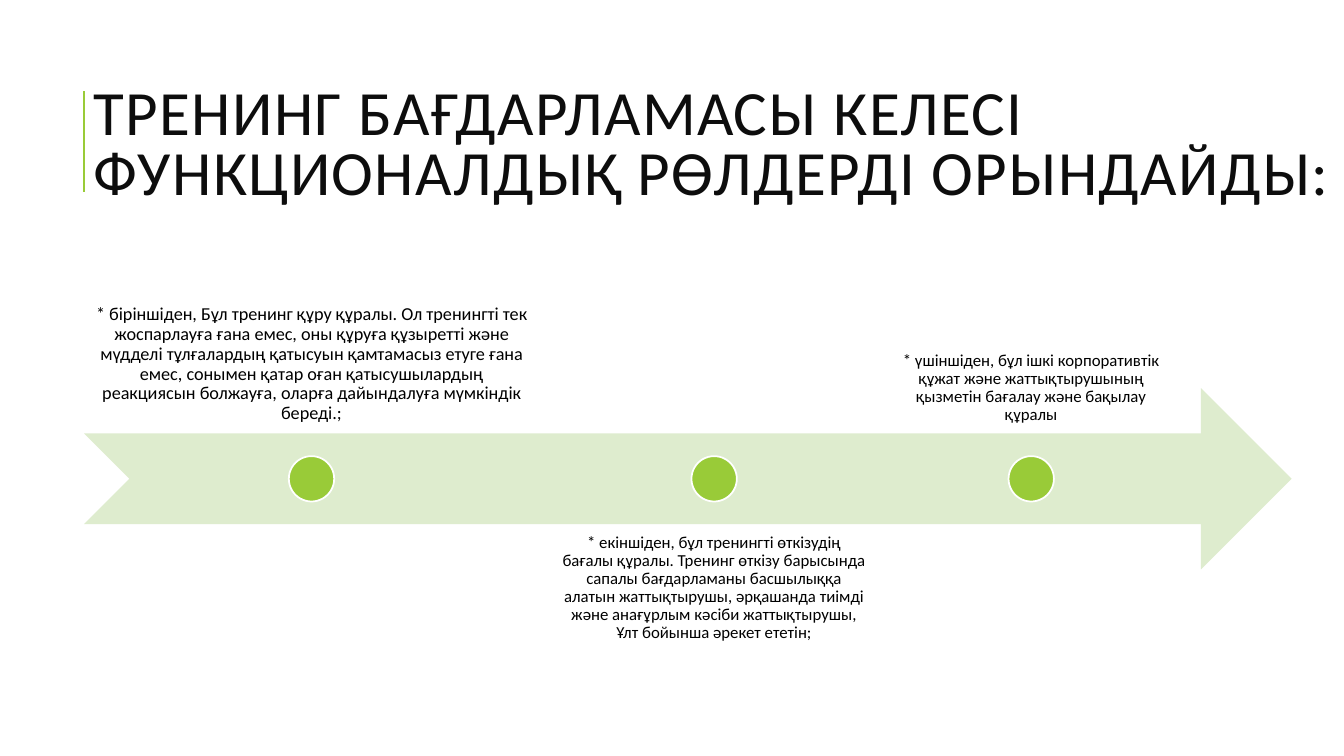
from dataclasses import dataclass

from lxml.etree import SubElement
from pptx import Presentation
from pptx.dml.color import RGBColor
from pptx.enum.shapes import MSO_CONNECTOR as Connector, MSO_SHAPE as Shape
from pptx.enum.text import MSO_ANCHOR as Anchor, PP_ALIGN as Align
from pptx.oxml.ns import qn
from pptx.util import Pt


@dataclass(frozen=True)
class Theme:
    font: str = "Calibri"
    accent: RGBColor = RGBColor(0x99, 0xCB, 0x38)
    arrow: RGBColor = RGBColor(0xDE, 0xEC, 0xCE)
    white: RGBColor = RGBColor(0xFF, 0xFF, 0xFF)
    heading: RGBColor = RGBColor(0x0D, 0x0D, 0x0D)
    body: RGBColor = RGBColor(0, 0, 0)
    heading_size: float = 45
    large_size: float = 13
    small_size: float = 12


THEME = Theme()

HEADING = "ТРЕНИНГ БАҒДАРЛАМАСЫ КЕЛЕСІ ФУНКЦИОНАЛДЫҚ РӨЛДЕРДІ ОРЫНДАЙДЫ:"

# Each role: offset from the timeline's left, width, type size, inset, text
ROLES = [
    (0.5, 324, THEME.large_size, 7.2,
     "* біріншіден, Бұл тренинг құру құралы. Ол тренингті тек жоспарлауға ғана "
     "емес, оны құруға құзыретті және мүдделі тұлғалардың қатысуын қамтамасыз "
     "етуге ғана емес, сонымен қатар оған қатысушылардың реакциясын болжауға, "
     "оларға дайындалуға мүмкіндік береді.;"),
    (333.8, 232.6, THEME.small_size, 6.7,
     "* екіншіден, бұл тренингті өткізудің бағалы құралы. Тренинг өткізу "
     "барысында сапалы бағдарламаны басшылыққа алатын жаттықтырушы, әрқашанда "
     "тиімді және анағұрлым кәсіби жаттықтырушы, Ұлт бойынша әрекет ететін;"),
    (576.5, 200.2, THEME.small_size, 6.7,
     "* үшіншіден, бұл ішкі корпоративтік құжат және жаттықтырушының қызметін "
     "бағалау және бақылау құралы"),
]


def add_text(slide, box, text, size, color, anchor, align, line_spacing, inset):
    frame = slide.shapes.add_textbox(*map(Pt, box)).text_frame
    frame.word_wrap = True
    frame.vertical_anchor = anchor
    frame.margin_left = frame.margin_right = Pt(inset)
    frame.margin_top = frame.margin_bottom = Pt(inset)
    paragraph = frame.paragraphs[0]
    paragraph.text = text
    paragraph.alignment = align
    paragraph.line_spacing = line_spacing
    paragraph.font.name = THEME.font
    paragraph.font.size = Pt(size)
    paragraph.font.color.rgb = color
    return paragraph


def add_filled(slide, kind, box, color):
    shape = slide.shapes.add_shape(kind, *map(Pt, box))
    shape.shadow.inherit = False
    shape.fill.solid()
    shape.fill.fore_color.rgb = color
    shape.line.fill.background()
    return shape


def add_heading(slide, left, top, width, height):
    # Accent rule at the left edge
    rule = slide.shapes.add_connector(
        Connector.STRAIGHT, Pt(left), Pt(top + 90.7), Pt(left), Pt(top + 18.7))
    rule.line.color.rgb = THEME.accent
    rule.line.width = Pt(1.5)
    SubElement(rule._element.spPr, qn("a:effectLst"))

    # Heading with letters spaced by one point
    heading = add_text(slide, (left, top, width, height), HEADING,
                       THEME.heading_size, THEME.heading, Anchor.MIDDLE,
                       Align.LEFT, 0.8, 7.2)
    heading.runs[0].font._element.set("spc", "100")


def add_timeline(slide, left, top, width, height):
    # The arrow takes the middle of the region, its shaft half of the arrow
    label_height = arrow_height = height * 0.4
    middle = top + height / 2
    add_filled(slide, Shape.NOTCHED_RIGHT_ARROW,
               (left, middle - arrow_height / 2, width, arrow_height), THEME.arrow)

    # Labels alternate above and below the shaft, each with a dot on it
    dot_size = arrow_height / 4
    for index, (offset, label_width, size, inset, text) in enumerate(ROLES):
        above = index % 2 == 0
        label_left = left + offset
        label_top = top if above else top + height - label_height
        label = add_text(slide, (label_left, label_top, label_width, label_height),
                         text, size, THEME.body,
                         Anchor.BOTTOM if above else Anchor.TOP,
                         Align.CENTER, 0.9, inset)
        label.space_after = Pt(size * 0.35)
        dot = add_filled(slide, Shape.OVAL,
                         (label_left + (label_width - dot_size) / 2,
                          middle - dot_size / 2, dot_size, dot_size), THEME.accent)
        dot.line.color.rgb = THEME.white
        dot.line.width = Pt(1.25)


def main():
    deck = Presentation()
    deck.slide_width, deck.slide_height = Pt(960), Pt(540)
    slide = deck.slides.add_slide(deck.slide_layouts[6])
    add_heading(slide, 60, 46.1, 900, 118.1)
    add_timeline(slide, 60, 180, 862.6, 324)
    deck.save("out.pptx")


if __name__ == "__main__":
    main()
